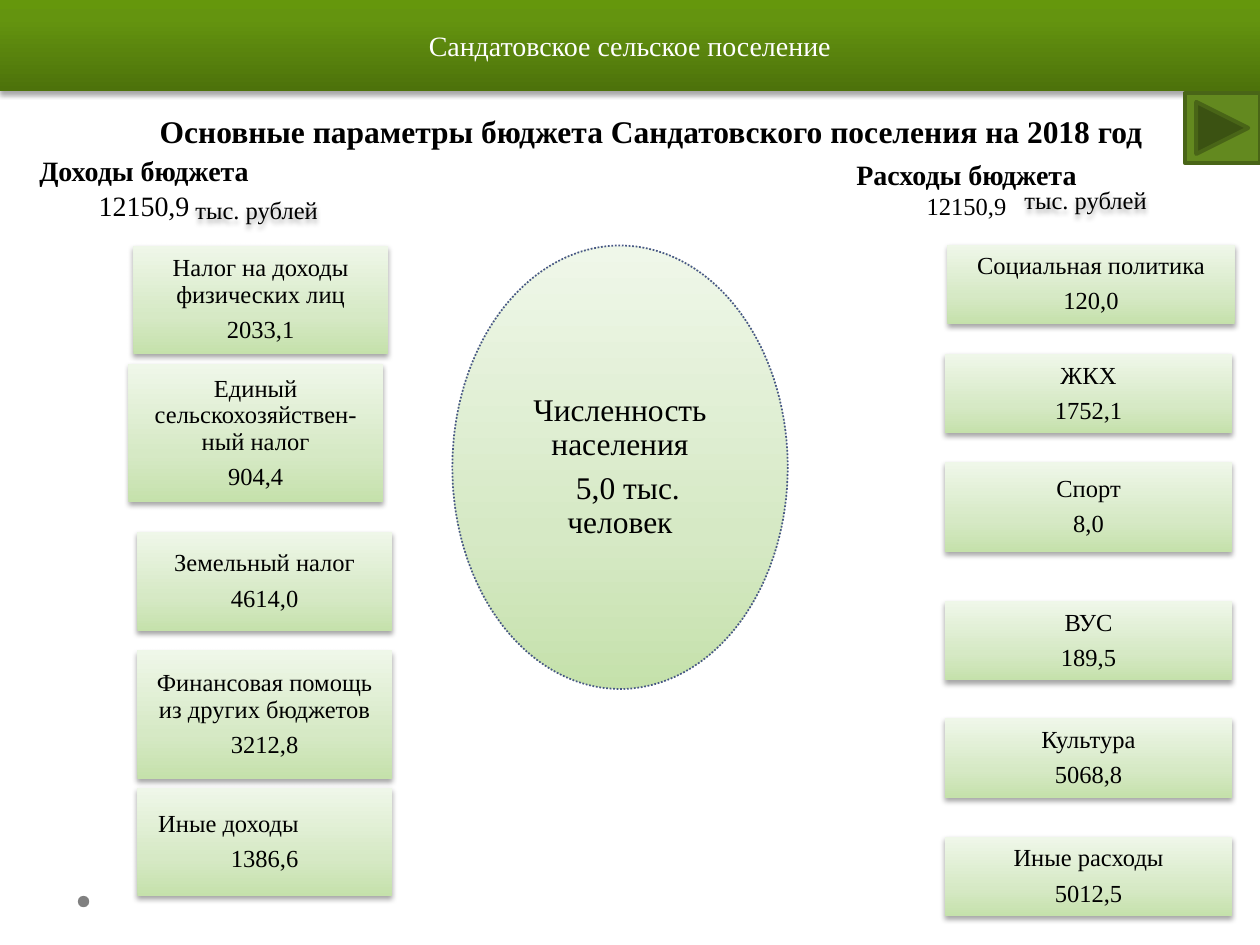
from lxml import etree
from pptx import Presentation
from pptx.dml.color import RGBColor
from pptx.enum.dml import MSO_LINE
from pptx.enum.shapes import MSO_SHAPE
from pptx.enum.text import MSO_ANCHOR, PP_ALIGN
from pptx.oxml.ns import qn
from pptx.util import Cm, Pt

CENTER, LEFT = PP_ALIGN.CENTER, PP_ALIGN.LEFT
TOP, MIDDLE, BOTTOM = MSO_ANCHOR.TOP, MSO_ANCHOR.MIDDLE, MSO_ANCHOR.BOTTOM
RECTANGLE, OVAL = MSO_SHAPE.RECTANGLE, MSO_SHAPE.OVAL
NEXT_BUTTON = MSO_SHAPE.ACTION_BUTTON_FORWARD_OR_NEXT
DOTTED = MSO_LINE.ROUND_DOT


class Theme:
    font = "Times New Roman"
    black, white, dot = "000000", "FFFFFF", "808080"
    button, button_line, oval_line = "63891F", "496517", "475785"
    banner = [(0, "4D720B"), (80, "64940F"), (100, "65970C")]
    pale = [(0, "C5E1AB"), (35, "D6E9C5"), (100, "EFF7E9")]
    small, medium, large = 14, 16, 18


BANNER = "Сандатовское сельское поселение"
TITLE = "Основные параметры бюджета Сандатовского поселения на 2018 год"
INCOME_TOTAL = ("Доходы бюджета", "12150,9")
EXPENSE_TOTAL = ("Расходы бюджета", "12150,9")
UNIT = "тыс. рублей"
POPULATION = ("Численность населения", "5,0 тыс. человек")

# name, value, left, top, height in cm
INCOME = [
    ("Налог на доходы физических лиц", "2033,1", 2.69, 4.95, 2.18),
    ("Единый сельскохозяйствен-ный налог", "904,4", 2.59, 7.34, 2.79),
    ("Земельный налог", "4614,0", 2.77, 10.72, 2.01),
    ("Финансовая помощь из других бюджетов", "3212,8", 2.77, 13.11, 2.59),
    ("Иные доходы", "1386,6", 2.77, 15.88, 2.18),
]
EXPENSES = [
    ("Социальная политика", "120,0", 19.1, 4.93, 1.6),
    ("ЖКХ", "1752,1", 19.05, 7.14, 1.6),
    ("Спорт", "8,0", 19.05, 9.32, 1.8),
    ("ВУС", "189,5", 19.05, 12.12, 1.6),
    ("Культура", "5068,8", 19.05, 14.48, 1.6),
    ("Иные расходы", "5012,5", 19.05, 16.87, 1.6),
]
INCOME_WIDTH, EXPENSE_WIDTH = 5.13, 5.79
CARD_INSETS = (0.18, 0.18, 0.18, 0.18)
HEADING_INSETS = (0.25, 0.05, 0.25, 0.13)

presentation = Presentation()
presentation.slide_width, presentation.slide_height = Cm(25.4), Cm(19.05)
slide = presentation.slides.add_slide(presentation.slide_layouts[6])


def color(value):
    return RGBColor.from_string(value)


def add_element(parent, tag, **attributes):
    return etree.SubElement(parent, qn(tag), attributes)


def add_shadow(shape):
    """Cast a soft shadow straight down; on a text box it falls from the letters."""
    shape.shadow.inherit = False
    effects = shape._element.spPr.find(qn("a:effectLst"))
    shadow = add_element(effects, "a:outerShdw", blurRad=str(Pt(3.1)), dist=str(Pt(1.8)),
                         dir="5400000", algn="ctr", rotWithShape="0")
    shade = add_element(shadow, "a:srgbClr", val=Theme.black)
    add_element(shade, "a:alpha", val="35000")


def fill_gradient(shape, stops):
    """Fill from the bottom up with (percent, colour) stops."""
    shape.fill.gradient()
    shape.fill.gradient_angle = 90
    stop_list = shape._element.spPr.find(qn("a:gradFill")).find(qn("a:gsLst"))
    for stop in list(stop_list):
        stop_list.remove(stop)
    for percent, value in stops:
        stop = add_element(stop_list, "a:gs", pos=str(percent * 1000))
        add_element(stop, "a:srgbClr", val=value)


def add_shape(kind, left, top, width, height, fill, line=None, line_width=1):
    shape = slide.shapes.add_shape(kind, Cm(left), Cm(top), Cm(width), Cm(height))
    shape.shadow.inherit = False
    if isinstance(fill, list):
        fill_gradient(shape, fill)
    else:
        shape.fill.solid()
        shape.fill.fore_color.rgb = color(fill)
    if line:
        shape.line.color.rgb = color(line)
        shape.line.width = Pt(line_width)
    else:
        shape.line.fill.background()
    return shape


def add_text_box(left, top, width, height):
    return slide.shapes.add_textbox(Cm(left), Cm(top), Cm(width), Cm(height))


def write(shape, lines, size, anchor=MIDDLE, insets=None, spacing=None, after=0,
          font_color=Theme.black):
    """Write one centred paragraph per line and return the paragraphs."""
    frame = shape.text_frame
    frame.word_wrap, frame.vertical_anchor = True, anchor
    if insets:
        (frame.margin_left, frame.margin_top,
         frame.margin_right, frame.margin_bottom) = map(Cm, insets)
    frame.text = "\n".join(lines)
    for paragraph in frame.paragraphs:
        paragraph.alignment = CENTER
        paragraph.space_after = Pt(after)
        if spacing:
            paragraph.line_spacing = spacing
        font = paragraph.font
        font.name, font.size, font.color.rgb = Theme.font, Pt(size), color(font_color)
    return frame.paragraphs


def indent_first_line(paragraph, distance):
    paragraph._p.get_or_add_pPr().set("indent", str(Cm(distance)))


def add_card(name, value, left, top, width, height):
    card = add_shape(RECTANGLE, left, top, width, height, Theme.pale)
    add_shadow(card)
    return write(card, (name, value), Theme.small, insets=CARD_INSETS, spacing=0.9, after=5)


add_shape(OVAL, 1.57, 18.06, 0.23, 0.23, Theme.dot)

title, = write(add_text_box(1.7, 1.83, 22.86, 1.32), [TITLE], Theme.large,
               BOTTOM, HEADING_INSETS, Pt(28))
title.font.bold = True

heading, total = write(add_text_box(0.3, 3.12, 5.21, 1.57), INCOME_TOTAL, Theme.medium,
                       TOP, HEADING_INSETS, 0.9)
heading.font.bold = True
total.space_before = Pt(3)

heading, total = write(add_text_box(16.69, 3.12, 5.59, 1.57), EXPENSE_TOTAL, Theme.medium,
                       TOP, (0, 0.05, 0, 0))
heading.font.bold = True
total.font.size = Pt(Theme.small)

banner = add_shape(RECTANGLE, 0, 0, 25.4, 1.83, Theme.banner)
add_shadow(banner)
write(banner, [BANNER], Theme.medium, font_color=Theme.white)

for name, value, left, top, height in INCOME:
    card_lines = add_card(name, value, left, top, INCOME_WIDTH, height)
other_income = card_lines[0]
other_income.alignment = LEFT
indent_first_line(other_income, 0.24)

for name, value, left, top, height in EXPENSES:
    add_card(name, value, left, top, EXPENSE_WIDTH, height)

for left, top in [(3.51, 3.86), (20.22, 3.66)]:
    unit = add_text_box(left, top, 3.33, 0.81)
    add_shadow(unit)
    write(unit, [UNIT], Theme.small, insets=CARD_INSETS, spacing=0.9)

add_shape(NEXT_BUTTON, 23.88, 1.88, 1.52, 1.4, Theme.button, Theme.button_line, 2.25)

population = add_shape(OVAL, 9.12, 4.95, 6.76, 8.94, Theme.pale, Theme.oval_line)
population.line.dash_style = DOTTED
people = write(population, POPULATION, Theme.large, spacing=0.9, after=6)
indent_first_line(people[1], 0.32)

presentation.save("out.pptx")
